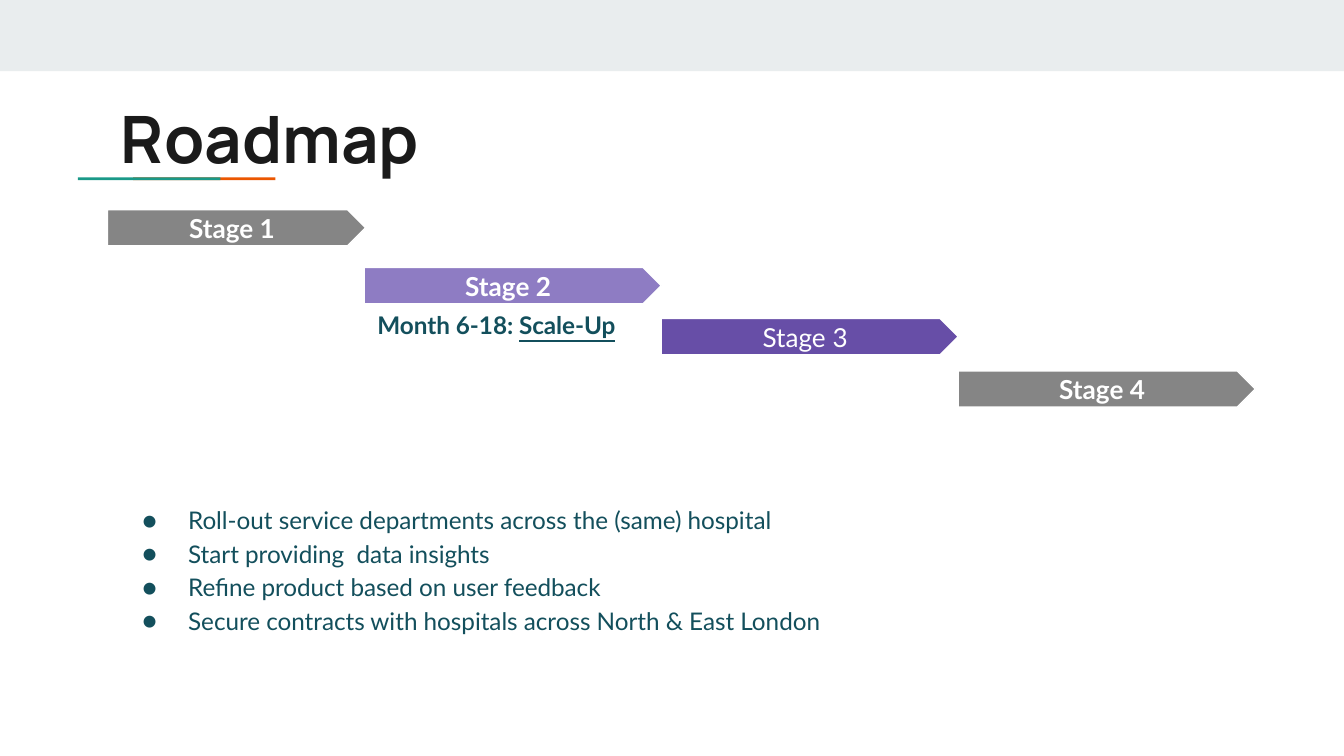
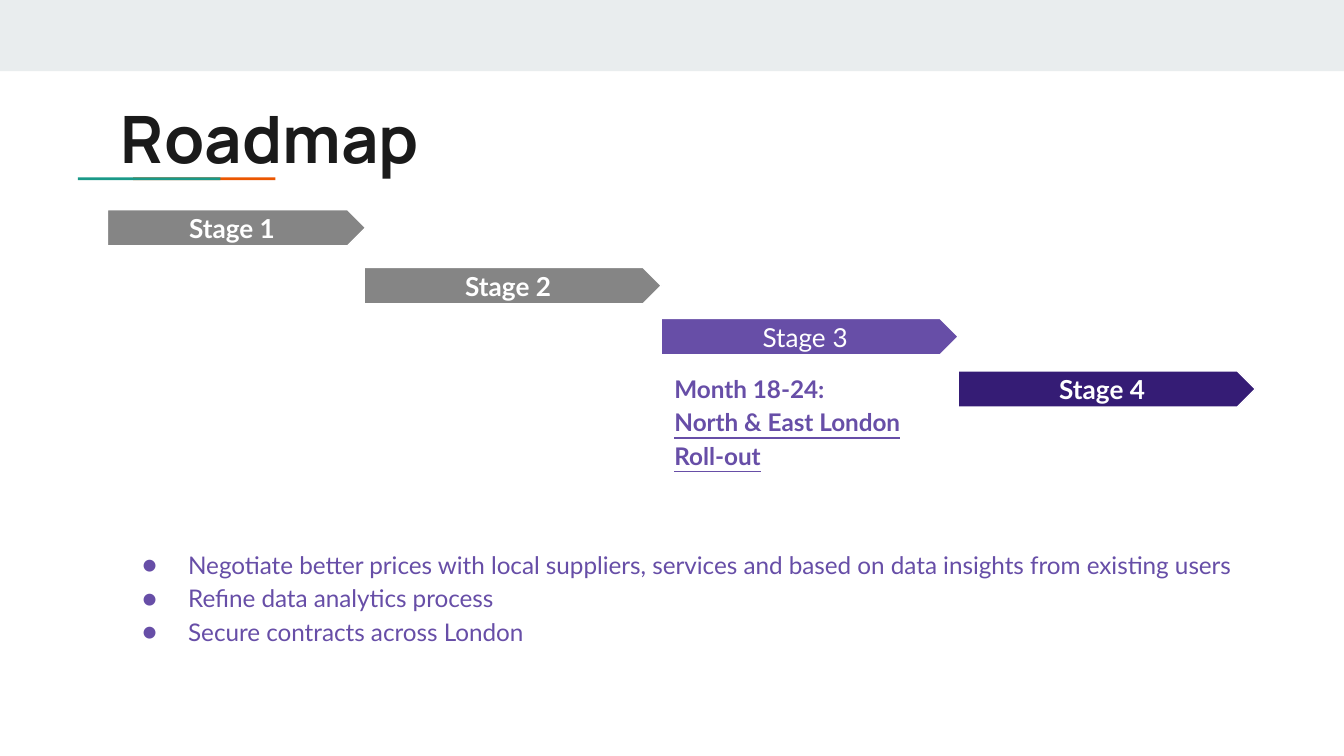
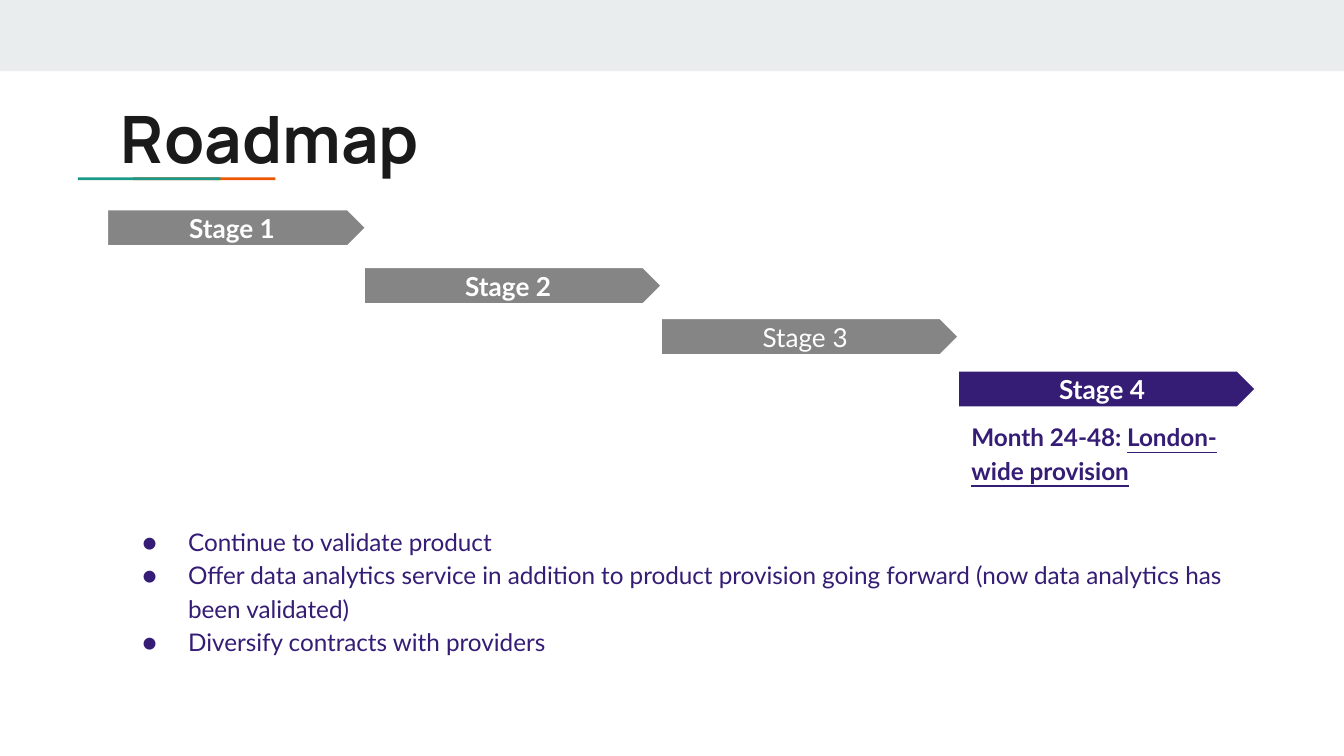
from lxml import etree
from pptx import Presentation
from pptx.dml.color import RGBColor
from pptx.enum.shapes import MSO_SHAPE
from pptx.enum.text import MSO_ANCHOR, MSO_AUTO_SIZE, PP_ALIGN
from pptx.oxml.ns import qn
from pptx.util import Inches, Pt

RECT, PENTAGON = MSO_SHAPE.RECTANGLE, MSO_SHAPE.PENTAGON
TOP, MIDDLE = MSO_ANCHOR.TOP, MSO_ANCHOR.MIDDLE
LEFT, CENTER = PP_ALIGN.LEFT, PP_ALIGN.CENTER
NO_FIT = MSO_AUTO_SIZE.NONE

WHITE, INK, BAND, TEAL, ORANGE = "FFFFFF", "1A1A1A", "E9EDEE", "1A9988", "EB5600"
GREY, LILAC, PURPLE, INDIGO, PETROL = "858585", "8E7CC3", "674EA7", "351C75", "134F5C"

TITLE_FONT = {"name": "Manrope", "size": Pt(35), "bold": True}
BODY_FONT = {"name": "Lato", "size": Pt(13)}
STAGE_FONT = {"name": "Lato", "size": Pt(14)}

FIRST_LEFT, FIRST_WIDTH = 0.8, 1.92
SECOND_LEFT, STAGE_WIDTH, STAGE_HEIGHT = 2.71, 2.21, 0.27
STAGE_TOPS = [1.56, 1.99, 2.37, 2.76]
LIGHT_STAGE = 2

SLIDES = [
    {
        "fills": [GREY, LILAC, PURPLE, GREY],
        "color": PETROL,
        "caption": (1, 2.21, 2.12, 0.42, 1.0, "Month 6-18: ", "Scale-Up"),
        "box": (0.8, 3.63, 5.71, 1.18),
        "items": [
            "Roll-out service departments across the (same) hospital",
            "Start providing  data insights",
            "Refine product based on user feedback",
            "Secure contracts with hospitals across North & East London",
        ],
    },
    {
        "fills": [GREY, GREY, PURPLE, INDIGO],
        "color": PURPLE,
        "caption": (2, 2.65, 2.21, 0.92, 1.15, "Month 18-24:\v", "North & East London Roll-out"),
        "box": (0.8, 3.96, 8.72, 0.92),
        "items": [
            "Negotiate better prices with local suppliers, services and based on "
            "data insights from existing users",
            "Refine data analytics process",
            "Secure contracts across London",
        ],
    },
    {
        "fills": [GREY, GREY, GREY, INDIGO],
        "color": INDIGO,
        "caption": (3, 3.01, 2.21, 0.67, 1.15, "Month 24-48: ", "London-wide provision"),
        "box": (0.8, 3.79, 8.59, 1.18),
        "items": [
            "Continue to validate product",
            "Offer data analytics service in addition to product provision going "
            "forward (now data analytics has been validated)",
            "Diversify contracts with providers",
        ],
    },
]


def rgb(color):
    """Turn a hex string into a colour."""
    return RGBColor.from_string(color)


def inches(*values):
    """Turn numbers into lengths."""
    return [Inches(v) for v in values]


def stage_left(index):
    """Return the left edge of a stage."""
    return SECOND_LEFT + (index - 1) * STAGE_WIDTH if index else FIRST_LEFT


class Deck:
    """Hold the style and the current slide."""

    def __init__(self):
        """Start a widescreen presentation."""
        self.prs = Presentation()
        self.prs.slide_width = Inches(10)
        self.prs.slide_height = Inches(10 * 9 / 16)

    def new_slide(self):
        """Add a slide with its band and title rule."""
        self.slide = self.prs.slides.add_slide(self.prs.slide_layouts[1])
        self.shape(RECT, (0, 0, 10, 0.53), BAND)
        for left, color in ((0.99, ORANGE), (0.58, TEAL)):
            self.shape(RECT, (left, 1.32, 1.06, 0.02), color)

    def shape(self, kind, box, fill):
        """Draw a flat filled shape."""
        s = self.slide.shapes.add_shape(kind, *inches(*box))
        s.shadow.inherit = False
        s.fill.solid()
        s.fill.fore_color.rgb = rgb(fill)
        s.line.fill.background()
        return s

    def frame(self, s, anchor=TOP):
        """Prepare a text frame with even margins."""
        tf = s.text_frame
        margins = {f"margin_{side}": Inches(0.1) for side in ("left", "top", "right", "bottom")}
        for key, value in {**margins, "word_wrap": True, "auto_size": NO_FIT,
                           "vertical_anchor": anchor}.items():
            setattr(tf, key, value)
        return tf

    def paragraph(self, p, runs, color, font, align=LEFT, spacing=1.0, after=0):
        """Fill a paragraph with runs of text and their extra formats."""
        for key, value in {"alignment": align, "line_spacing": spacing,
                           "space_before": Pt(0), "space_after": Pt(after)}.items():
            setattr(p, key, value)
        for text, extra in runs:
            r = p.add_run()
            r.text = text.rstrip("\v")
            for key, value in {**font, **extra}.items():
                setattr(r.font, key, value)
            r.font.color.rgb = rgb(color)
            if text.endswith("\v"):
                p.add_line_break()

    def place(self, s, box):
        """Move a placeholder."""
        s.left, s.top, s.width, s.height = inches(*box)

    def title(self, text):
        """Write the slide title."""
        s = self.slide.shapes.title
        self.place(s, (0.8, 0.63, 8.41, 0.59))
        self.paragraph(self.frame(s).paragraphs[0], [(text, {})], INK, TITLE_FONT)

    def bullets(self, items, box, color):
        """Write the bullet list."""
        s = self.slide.placeholders[1]
        self.place(s, box)
        tf = self.frame(s)
        for i, item in enumerate(items):
            p = tf.add_paragraph() if i else tf.paragraphs[0]
            self.paragraph(p, [(item, {})], color, BODY_FONT, spacing=1.15)
            pPr = p._p.get_or_add_pPr()
            pPr.set("marL", str(Inches(0.5)))
            pPr.set("indent", str(Inches(-0.34)))
            buClr = etree.SubElement(pPr, qn("a:buClr"))
            etree.SubElement(buClr, qn("a:srgbClr"), val=color)
            etree.SubElement(pPr, qn("a:buSzPts"), val="1300")
            etree.SubElement(pPr, qn("a:buFont"), typeface="Lato")
            etree.SubElement(pPr, qn("a:buChar"), char="●")

    def stage(self, index, fill):
        """Draw one stage arrow of the roadmap."""
        width = STAGE_WIDTH if index else FIRST_WIDTH
        s = self.shape(PENTAGON, (stage_left(index), STAGE_TOPS[index], width, STAGE_HEIGHT), fill)
        s.line.color.rgb = rgb(WHITE)
        s.line.width = Pt(0.75)
        runs = [(f"Stage {index + 1}", {"bold": index != LIGHT_STAGE})]
        self.paragraph(self.frame(s, MIDDLE).paragraphs[0], runs, WHITE, STAGE_FONT, CENTER)

    def caption(self, index, top, width, height, spacing, months, goal, color):
        """Write the months and goal under a stage."""
        s = self.slide.shapes.add_textbox(*inches(stage_left(index), top, width, height))
        runs = [(months, {"bold": True}), (goal, {"bold": True, "underline": True})]
        self.paragraph(self.frame(s).paragraphs[0], runs, color, BODY_FONT,
                       spacing=spacing, after=12)


def main():
    """Build the roadmap slides."""
    deck = Deck()
    for content in SLIDES:
        deck.new_slide()
        deck.title("Roadmap")
        deck.bullets(content["items"], content["box"], content["color"])
        for index, fill in enumerate(content["fills"]):
            deck.stage(index, fill)
        deck.caption(*content["caption"], content["color"])
    deck.prs.save("out.pptx")


if __name__ == "__main__":
    main()
